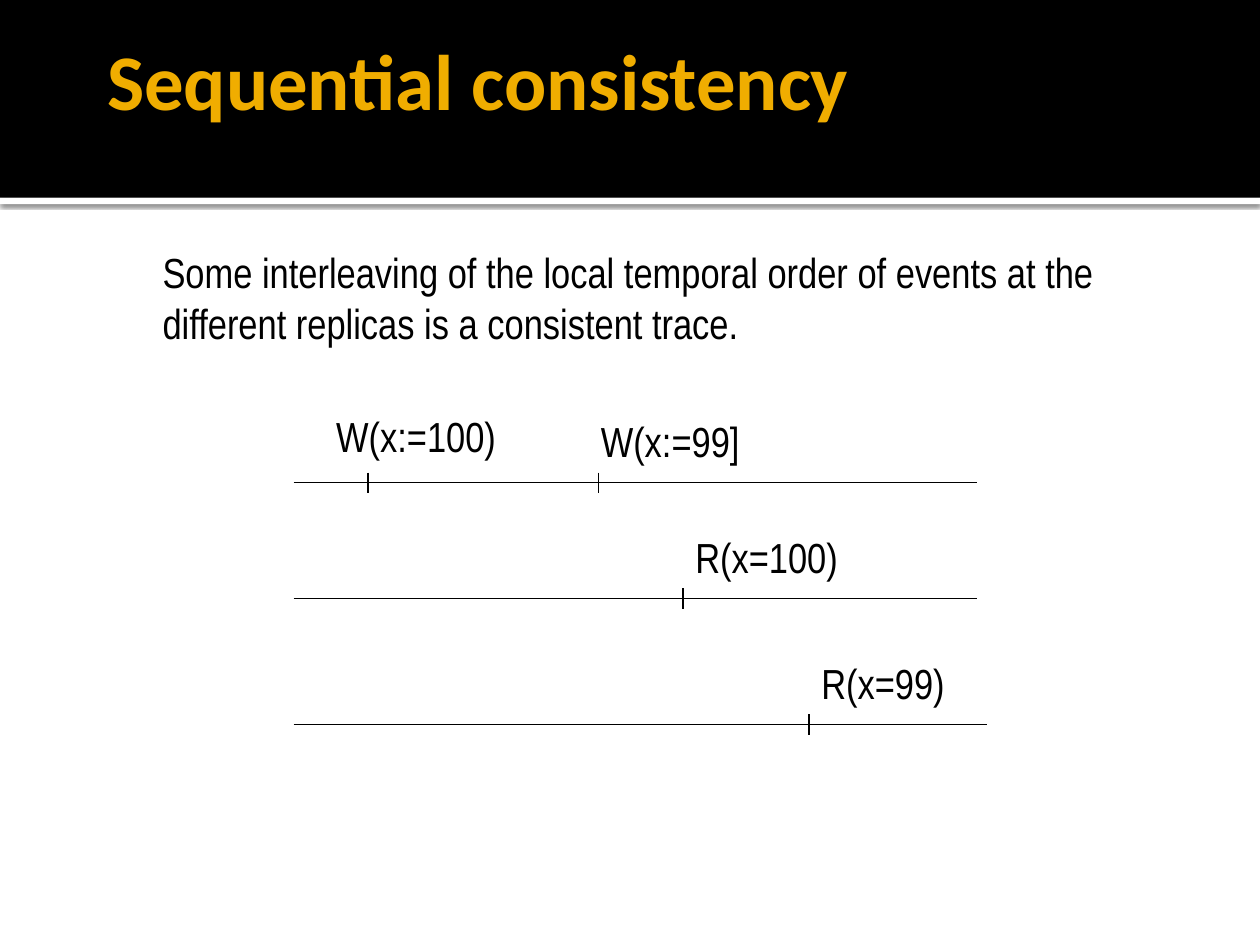
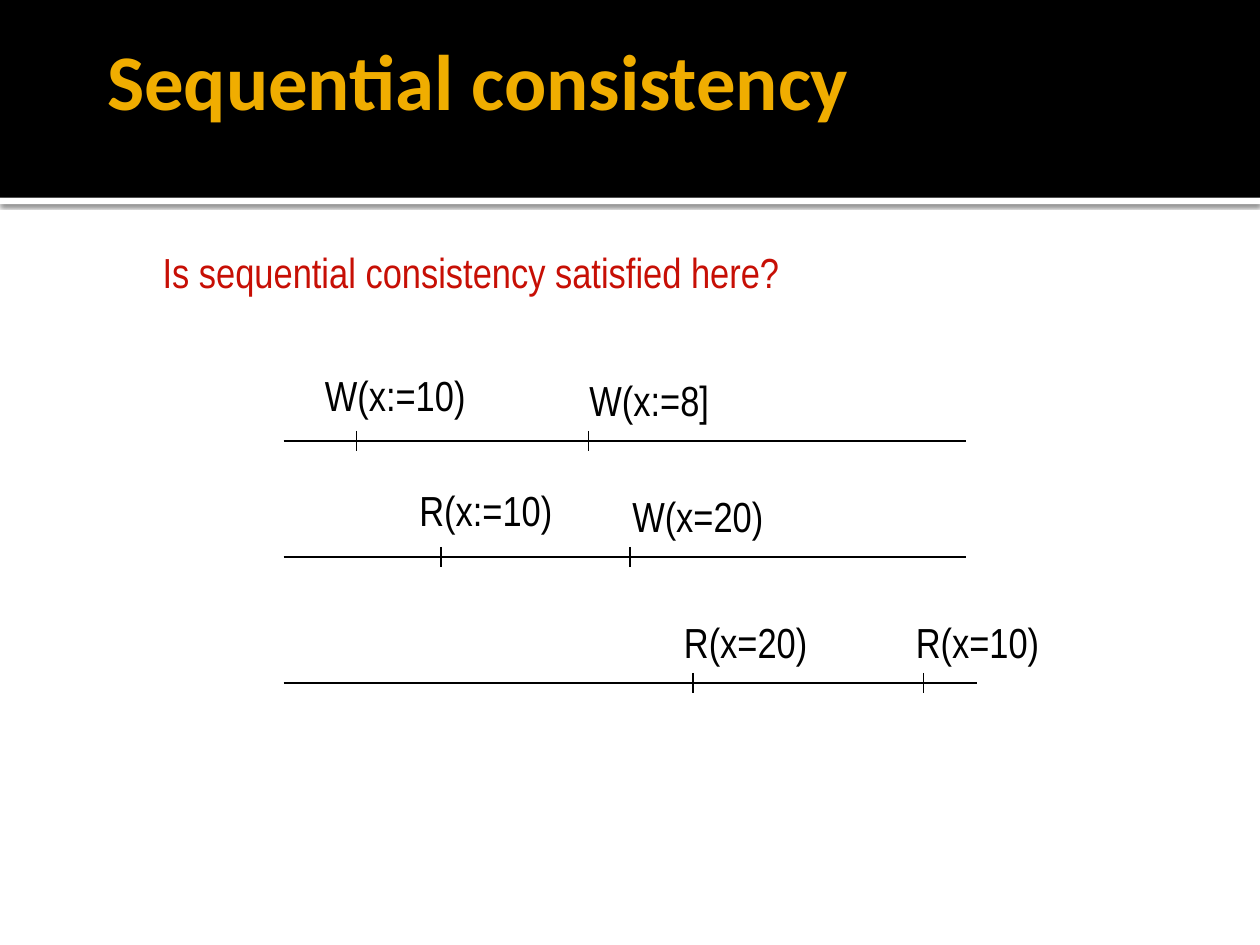
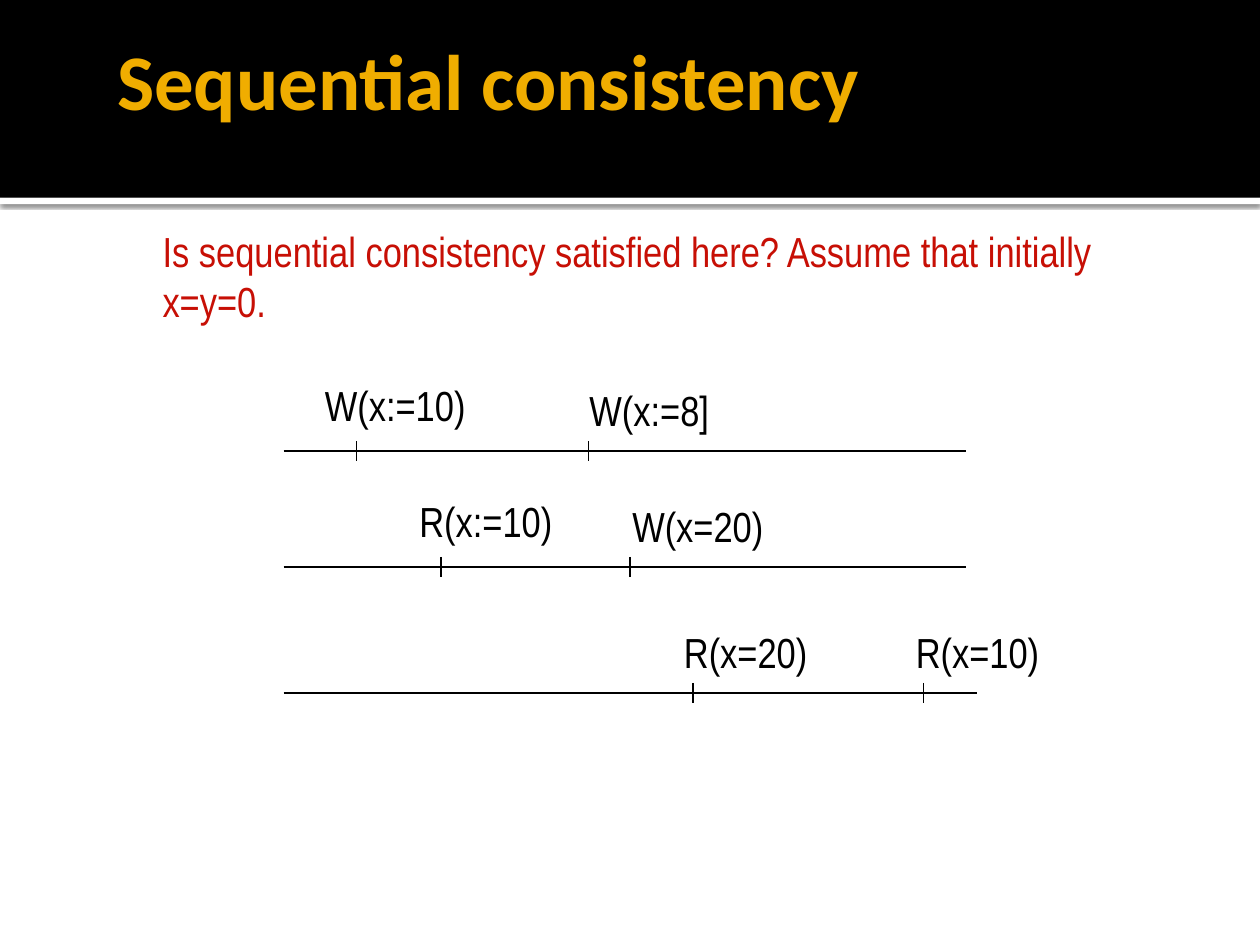
from pptx import Presentation
from pptx.dml.color import RGBColor
from pptx.enum import shapes, text
from pptx.oxml import parse_xml
from pptx.oxml.ns import nsdecls, qn
from pptx.util import Inches, Pt
from lxml import etree

BLACK = RGBColor(0x00, 0x00, 0x00)
WHITE = RGBColor(0xFF, 0xFF, 0xFF)
AMBER = RGBColor(0xF0, 0xAD, 0x00)
RED = RGBColor(0xC7, 0x0F, 0x05)

TITLE_FONT = {"name": "Calibri", "size": Pt(45), "bold": True}
BODY_FONT = {"name": "Arial Narrow", "size": Pt(24)}

TITLE_ONLY = 5
ROW_OFFSETS = (0, 0.92, 1.92)
ROW_LENGTHS = (5.42, 5.42, 5.5)
TICK_REACH = 0.08
LABEL_RISE = 0.58
HIGH_LABEL_RISE = 0.62

SHADOW = f"""<a:effectLst {nsdecls("a")}>
  <a:outerShdw blurRad="{Pt(2.5)}" dist="{Pt(0.8)}" dir="5400000" rotWithShape="0">
    <a:srgbClr val="000000"><a:alpha val="60000"/></a:srgbClr>
  </a:outerShdw>
</a:effectLst>"""

# Each replica lists its events: tick x, label left, label width, label, label rise.
WRITES_THEN_READS = (
    ((2.92, 2.57, 1.47, "W(x:=100)", HIGH_LABEL_RISE),
     (4.75, 4.67, 1.31, "W(x:=99]", LABEL_RISE)),
    ((5.42, 5.42, 1.33, "R(x=100)", LABEL_RISE),),
    ((6.42, 6.42, 1.18, "R(x=99)", LABEL_RISE),),
)
MIXED_EVENTS = (
    ((2.83, 2.48, 1.32, "W(x:=10)", HIGH_LABEL_RISE),
     (4.67, 4.58, 1.15, "W(x:=8]", LABEL_RISE)),
    ((3.5, 3.23, 1.26, "R(x:=10)", HIGH_LABEL_RISE),
     (5, 4.92, 1.24, "W(x=20)", LABEL_RISE)),
    ((5.5, 5.33, 1.18, "R(x=20)", LABEL_RISE),
     (7.33, 7.17, 1.18, "R(x=10)", LABEL_RISE)),
)


def set_attributes(target, values):
    for name, value in values.items():
        setattr(target, name, value)


class Deck:
    def __init__(self):
        self.presentation = Presentation()
        self.presentation.slide_width = Inches(10)
        self.presentation.slide_height = Inches(7.5)
        self.slide = None

    def new_slide(self, title, title_left=0.75):
        layout = self.presentation.slide_layouts[TITLE_ONLY]
        self.slide = self.presentation.slides.add_slide(layout)
        self.band(0, 1.57, BLACK)
        stripe = self.band(1.57, 0.05, WHITE)
        properties = stripe.element.spPr
        properties.replace(properties.find(qn("a:effectLst")), parse_xml(SHADOW))
        self.title(title, title_left)

    def band(self, top, height, color):
        """Add a full-width band behind everything else on the slide."""
        shape = self.slide.shapes.add_shape(
            shapes.MSO_SHAPE.RECTANGLE, 0, Inches(top),
            self.presentation.slide_width, Inches(height))
        shape.shadow.inherit = False
        shape.fill.solid()
        shape.fill.fore_color.rgb = color
        shape.line.fill.background()
        self.slide.shapes.element.insert(2, shape.element)
        return shape

    def title(self, words, left):
        shape = self.slide.shapes.title
        set_attributes(shape, {"left": Inches(left), "top": 0,
                               "width": Inches(8.5), "height": Inches(1.25)})
        set_attributes(shape.text_frame, {
            "vertical_anchor": text.MSO_ANCHOR.MIDDLE, "word_wrap": True,
            "auto_size": text.MSO_AUTO_SIZE.NONE,
            "margin_left": Inches(0.1), "margin_right": Inches(0.05)})
        self.add_words(shape, words, TITLE_FONT, AMBER)

    def add_words(self, shape, words, font, color):
        paragraph = shape.text_frame.paragraphs[0]
        paragraph.alignment = text.PP_ALIGN.LEFT
        run = paragraph.add_run()
        run.text = words
        set_attributes(run.font, font)
        run.font.color.rgb = color

    def text_box(self, left, top, width, height, words, color, frame_format):
        shape = self.slide.shapes.add_textbox(*map(Inches, (left, top, width, height)))
        set_attributes(shape.text_frame, frame_format)
        self.add_words(shape, words, BODY_FONT, color)

    def statement(self, words, color, top=1.75, height=4.5):
        self.text_box(0.75, top, 8.5, height, words, color, {
            "word_wrap": True, "margin_left": Inches(0.54), "margin_top": Inches(0.21)})

    def label(self, left, top, width, words):
        self.text_box(left, top, width, 0.5, words, BLACK, {
            "word_wrap": False, "auto_size": text.MSO_AUTO_SIZE.SHAPE_TO_FIT_TEXT})

    def line(self, *ends):
        connector = self.slide.shapes.add_connector(
            shapes.MSO_CONNECTOR.STRAIGHT, *map(Inches, ends))
        connector.line.color.rgb = BLACK
        connector.line.width = Pt(0.75)
        etree.SubElement(connector.element.spPr, qn("a:effectLst"))

    def timelines(self, left, top, replicas):
        """Draw one line per replica, with a tick and a label for each event."""
        for offset, length, events in zip(ROW_OFFSETS, ROW_LENGTHS, replicas):
            y = top + offset
            self.line(left, y, left + length, y)
            for tick, label_left, width, words, rise in events:
                self.line(tick, y - TICK_REACH, tick, y + TICK_REACH)
                self.label(label_left, y - rise, width, words)


def main():
    deck = Deck()
    title = "Sequential consistency"
    question = "Is sequential consistency satisfied here?"

    deck.new_slide(title)
    deck.statement("Some interleaving of the local temporal order of events at the "
                   "different replicas is a consistent trace.", BLACK)
    deck.timelines(2.33, 3.83, WRITES_THEN_READS)

    deck.new_slide(title)
    deck.statement(question, RED)
    deck.timelines(2.25, 3.5, MIXED_EVENTS)

    deck.new_slide(title, title_left=0.83)
    deck.statement(f"{question} Assume that initially x=y=0.", RED, top=1.58, height=1.08)
    deck.timelines(2.25, 3.58, MIXED_EVENTS)

    deck.presentation.save("out.pptx")


if __name__ == "__main__":
    main()
